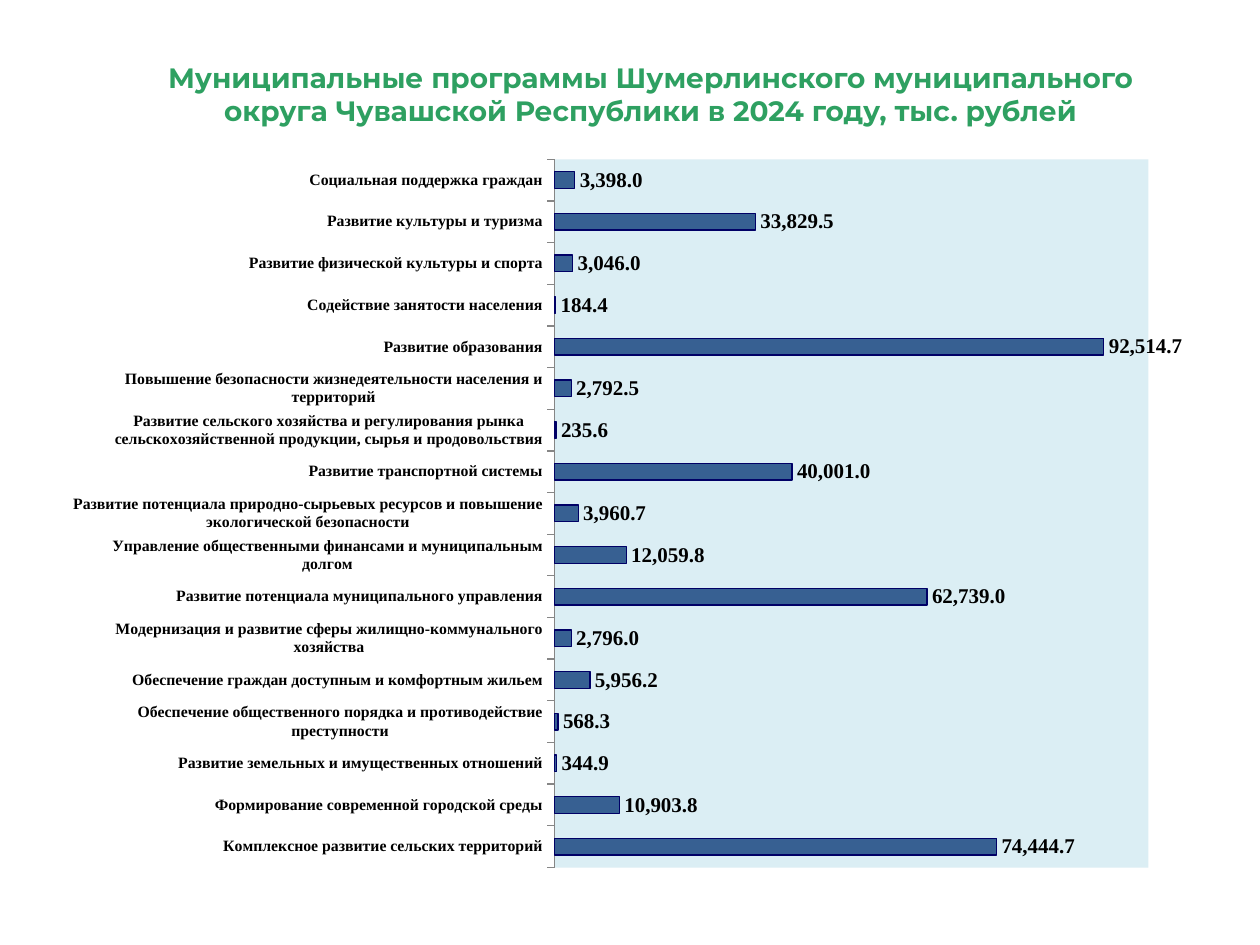
from lxml import etree
from pptx import Presentation
from pptx.chart.data import CategoryChartData
from pptx.dml.color import RGBColor
from pptx.enum.chart import XL_CHART_TYPE, XL_LABEL_POSITION, XL_TICK_MARK
from pptx.enum.text import MSO_ANCHOR, MSO_AUTO_SIZE, PP_ALIGN
from pptx.oxml import parse_xml
from pptx.oxml.ns import nsdecls, qn
from pptx.util import Inches, Pt

BAR = XL_CHART_TYPE.BAR_CLUSTERED
END = XL_LABEL_POSITION.OUTSIDE_END
OUT = XL_TICK_MARK.OUTSIDE
MIDDLE = MSO_ANCHOR.MIDDLE
FIXED = MSO_AUTO_SIZE.NONE
CENTER = PP_ALIGN.CENTER

COLORS = {
    "title": "2EA061",
    "text": "000000",
    "bar": "376092",
    "edge": "000066",
    "axis": "868686",
    "plot": "DBEEF4",
}
SERIF = "Times New Roman"
FORMAT = "#,##0.0"
TITLE = ("Муниципальные программы Шумерлинского муниципального "
         "округа Чувашской Республики в 2024 году, тыс. рублей")
COSTS = [
    ("Комплексное развитие сельских территорий", 74444.7),
    ("Формирование современной городской среды", 10903.8),
    ("Развитие земельных и имущественных отношений", 344.9),
    ("Обеспечение общественного порядка и противодействие преступности", 568.3),
    ("Обеспечение граждан доступным и комфортным жильем", 5956.2),
    ("Модернизация и развитие сферы жилищно-коммунального хозяйства", 2796),
    ("Развитие потенциала муниципального управления", 62739),
    ("Управление общественными финансами и муниципальным долгом", 12059.8),
    ("Развитие потенциала природно-сырьевых ресурсов и повышение "
     "экологической безопасности", 3960.7),
    ("Развитие транспортной системы", 40001),
    ("Развитие сельского хозяйства и регулирования рынка "
     "сельскохозяйственной продукции, сырья и продовольствия", 235.6),
    ("Повышение безопасности жизнедеятельности населения и территорий", 2792.5),
    ("Развитие образования", 92514.7),
    ("Содействие занятости населения", 184.4),
    ("Развитие физической культуры и спорта", 3046),
    ("Развитие культуры и туризма", 33829.5),
    ("Социальная поддержка граждан", 3398),
]


def color(name):
    return RGBColor.from_string(COLORS[name])


def set_font(font, face, size, bold, tint):
    font.name = face
    font.size = Pt(size)
    font.bold = bold
    font.color.rgb = color(tint)


def add_title(slide, box):
    title = slide.shapes.title
    title.left, title.top, title.width, title.height = box
    frame = title.text_frame
    frame.word_wrap = True
    frame.auto_size = FIXED
    frame.vertical_anchor = MIDDLE
    para = frame.paragraphs[0]
    para.alignment = CENTER
    para.line_spacing = 1.0
    run = para.add_run()
    run.text = TITLE
    set_font(run.font, "Montserrat", 16, True, "title")


def style_plot(chart, box):
    area = chart.plots[0]._element.getparent()
    old = area.find(qn("c:layout"))
    if old is not None:
        area.remove(old)
    layout = etree.Element(qn("c:layout"))
    manual = etree.SubElement(layout, qn("c:manualLayout"))
    parts = [("layoutTarget", "inner"), ("xMode", "edge"), ("yMode", "edge")]
    for tag, val in parts + list(zip("xywh", box)):
        etree.SubElement(manual, qn("c:" + tag)).set("val", str(val))
    area.insert(0, layout)
    area.append(parse_xml(
        f'<c:spPr {nsdecls("c", "a")}><a:solidFill>'
        f'<a:srgbClr val="{COLORS["plot"]}"/></a:solidFill></c:spPr>'))


def add_costs(slide, box):
    data = CategoryChartData(number_format=FORMAT)
    data.categories = [name for name, cost in COSTS]
    data.add_series("Series 1", [cost for name, cost in COSTS])
    chart = slide.shapes.add_chart(BAR, *box, data).chart
    chart.has_legend = False
    chart.has_title = False
    set_font(chart.font, "Calibri", 10, False, "text")

    names = chart.category_axis
    names.major_tick_mark = OUT
    names.format.line.color.rgb = color("axis")
    set_font(names.tick_labels.font, SERIF, 9, True, "text")
    scale = chart.value_axis
    scale.visible = False
    scale.has_major_gridlines = False
    scale.minimum_scale = 0
    scale.maximum_scale = 100000
    scale.tick_labels.number_format = FORMAT
    scale.tick_labels.number_format_is_linked = False

    plot = chart.plots[0]
    plot.gap_width = 150
    plot.vary_by_categories = False
    bars = plot.series[0]
    bars.format.fill.solid()
    bars.format.fill.fore_color.rgb = color("bar")
    bars.format.line.color.rgb = color("edge")
    bars.format.line.width = Pt(0.75)
    labels = bars.data_labels
    labels.show_value = True
    labels.position = END
    labels.number_format = FORMAT
    labels.number_format_is_linked = False
    set_font(labels.font, SERIF, 12, True, "text")
    style_plot(chart, (0.43, 0.04, 0.53, 0.92))


def main():
    deck = Presentation()
    deck.slide_width = Inches(10)
    deck.slide_height = Inches(7.5)
    slide = deck.slides.add_slide(deck.slide_layouts[5])
    add_title(slide, [Inches(n) for n in (0.99, 0.36, 8.35, 0.77)])
    add_costs(slide, [Inches(n) for n in (0.58, 1.02, 8.89, 6.11)])
    deck.save("out.pptx")


if __name__ == "__main__":
    main()
